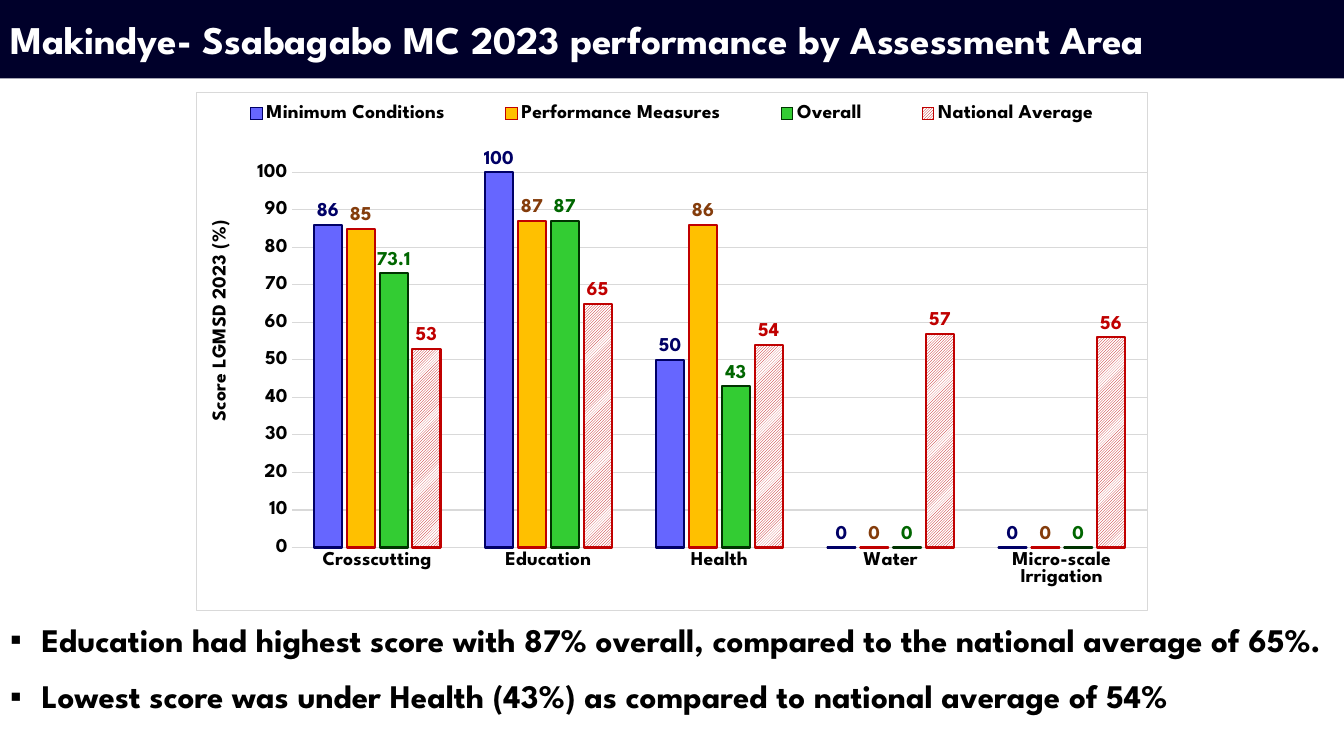
from lxml import etree
from pptx import Presentation
from pptx.chart.data import CategoryChartData
from pptx.dml.color import RGBColor
from pptx.enum import chart as charts, dml, text
from pptx.oxml import parse_xml
from pptx.oxml.ns import nsdecls, qn
from pptx.util import Pt

FONT = "League Spartan"
GREY = "D9D9D9"
TITLE = "Makindye- Ssabagabo MC 2023 performance by Assessment Area"
FINDINGS = [
    "Education had highest score with 87% overall, compared to the national average of 65%.",
    "Lowest score was under Health (43%) as compared to national average of 54%",
]
AREAS = ["Crosscutting", "Education", "Health", "Water", "Micro-scale Irrigation"]
# name, values, fill (None for hatching), outline, label colour
SERIES = [
    ("Minimum Conditions", [86, 100, 50, 0, 0], "6666FF", "000066", "000066"),
    ("Performance Measures", [85, 87, 86, 0, 0], "FFC000", "C00000", "843C0B"),
    ("Overall", [73.1, 87, 43, 0, 0], "33CC33", "003300", "006600"),
    ("National Average", [53, 65, 54, 57, 56], None, "C00000", "C00000"),
]


def rgb(value):
    return RGBColor.from_string(value)


def style_font(font, size, color="000000"):
    font.name = FONT
    font.size = Pt(size)
    font.bold = True
    font.color.rgb = rgb(color)


def style_line(line, color, width):
    line.color.rgb = rgb(color)
    line.width = Pt(width)


def place(shape, left, top, width, height):
    shape.left, shape.top = Pt(left), Pt(top)
    shape.width, shape.height = Pt(width), Pt(height)


def set_layout(element, x, y, width=None, height=None, inner=False):
    """Give a chart part a manual position, in fractions of the chart."""
    for old in element.findall(qn("c:layout")):
        element.remove(old)
    layout = etree.Element(qn("c:layout"))
    manual = etree.SubElement(layout, qn("c:manualLayout"))
    settings = [("layoutTarget", "inner" if inner else None),
                ("xMode", "edge"), ("yMode", "edge"),
                ("x", x), ("y", y), ("w", width), ("h", height)]
    for name, value in settings:
        if value is not None:
            etree.SubElement(manual, qn(f"c:{name}")).set("val", str(value))
    overlay = element.find(qn("c:overlay"))
    if overlay is None:
        element.insert(0, layout)
    else:
        overlay.addprevious(layout)


def add_title(slide):
    title = slide.shapes.title
    place(title, 0, 0, 960, 56)
    title.fill.solid()
    title.fill.fore_color.rgb = rgb("00002A")
    frame = title.text_frame
    frame.text = TITLE
    frame.auto_size = text.MSO_AUTO_SIZE.NONE
    frame.vertical_anchor = text.MSO_ANCHOR.MIDDLE
    paragraph = frame.paragraphs[0]
    paragraph.alignment = text.PP_ALIGN.LEFT
    style_font(paragraph.font, 28, "FFFFFF")


def add_findings(slide):
    body = slide.placeholders[1]
    place(body, 0, 439, 960, 99)
    frame = body.text_frame
    frame.text = "\n".join(FINDINGS)
    frame.auto_size = text.MSO_AUTO_SIZE.NONE
    for paragraph in frame.paragraphs:
        style_font(paragraph.font, 23.5)
        paragraph.space_before = paragraph.space_after = Pt(6)
        properties = paragraph._p.get_or_add_pPr()
        properties.set("marL", str(Pt(22.5)))
        properties.set("indent", str(Pt(-22.5)))
        bullet = etree.Element(qn("a:buChar"), char="▪")
        properties.find(qn("a:defRPr")).addprevious(bullet)


def style_series(series, fill_color, line_color, label_color):
    fill = series.format.fill
    if fill_color:
        fill.solid()
        fill.fore_color.rgb = rgb(fill_color)
    else:
        fill.patterned()
        fill.pattern = dml.MSO_PATTERN.DARK_UPWARD_DIAGONAL
        fill.fore_color.rgb = rgb(line_color)
        fill.back_color.rgb = rgb("FFFFFF")
    style_line(series.format.line, line_color, 1.5)
    series.invert_if_negative = False
    labels = series.data_labels
    labels.show_value = True
    labels.position = charts.XL_LABEL_POSITION.OUTSIDE_END
    style_font(labels.font, 14, label_color)


def style_axes(chart):
    for axis in (chart.category_axis, chart.value_axis):
        axis.major_tick_mark = axis.minor_tick_mark = charts.XL_TICK_MARK.NONE
        style_font(axis.tick_labels.font, 14)
    style_line(chart.category_axis.format.line, GREY, 0.75)
    values = chart.value_axis
    values.minimum_scale, values.maximum_scale, values.major_unit = 0, 100, 10
    values.format.line.fill.background()
    style_line(values.major_gridlines.format.line, GREY, 0.75)
    title = values.axis_title
    title.text_frame.text = "Score LGMSD 2023 (%)"
    style_font(title.text_frame.paragraphs[0].font, 14)
    set_layout(title._element, 0.01, 0.24)


def add_score_chart(slide):
    data = CategoryChartData()
    data.categories = AREAS
    for name, values, *_ in SERIES:
        data.add_series(name, values)
    frame = slide.shapes.add_chart(
        charts.XL_CHART_TYPE.COLUMN_CLUSTERED,
        Pt(140), Pt(65.8), Pt(680), Pt(370.5), data)
    chart = frame.chart
    chart.has_title = False
    style_font(chart.font, 12)
    border = parse_xml(
        f'<c:spPr {nsdecls("c", "a")}>'
        '<a:solidFill><a:srgbClr val="FFFFFF"/></a:solidFill>'
        f'<a:ln w="{Pt(0.75)}"><a:solidFill><a:srgbClr val="{GREY}"/></a:solidFill></a:ln>'
        '</c:spPr>')
    chart._chartSpace.find(qn("c:txPr")).addprevious(border)

    plot = chart.plots[0]
    plot.gap_width, plot.overlap = 159, -17
    plot.vary_by_categories = False
    for series, (_, _, *colors) in zip(plot.series, SERIES):
        style_series(series, *colors)
    style_axes(chart)
    set_layout(chart._chartSpace.chart.plotArea, 0.1, 0.154, 0.9, 0.725, inner=True)

    chart.has_legend = True
    legend = chart.legend
    legend.position = charts.XL_LEGEND_POSITION.TOP
    legend.include_in_layout = False
    style_font(legend.font, 14)
    set_layout(legend._element, 0, 0.01, 1, 0.06)


def main():
    presentation = Presentation()
    presentation.slide_width, presentation.slide_height = Pt(960), Pt(540)
    slide = presentation.slides.add_slide(presentation.slide_layouts[1])
    add_title(slide)
    add_findings(slide)
    add_score_chart(slide)
    presentation.save("out.pptx")


if __name__ == "__main__":
    main()
